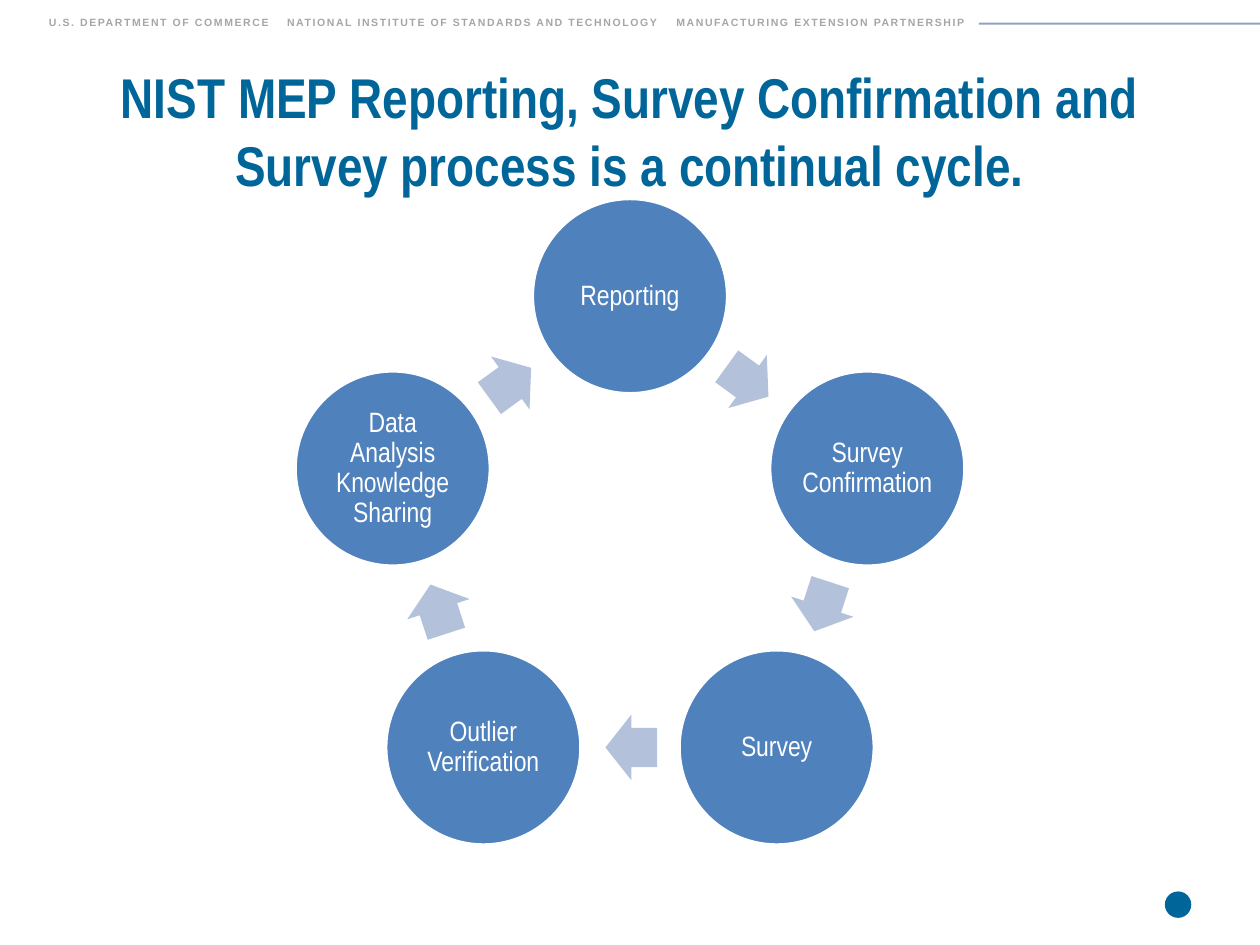
from dataclasses import dataclass
from math import cos, pi, radians, sin

from lxml.etree import SubElement
from pptx import Presentation
from pptx.dml.color import RGBColor
from pptx.enum.shapes import MSO_CONNECTOR, MSO_SHAPE
from pptx.enum.text import MSO_ANCHOR, PP_ALIGN
from pptx.oxml.ns import qn
from pptx.shapes.autoshape import Shape
from pptx.slide import Slide
from pptx.text.text import _Paragraph as Paragraph
from pptx.util import Inches, Pt


@dataclass(frozen=True)
class Theme:
    title: RGBColor = RGBColor(0x00, 0x66, 0x99)
    stage: RGBColor = RGBColor(0x4F, 0x81, 0xBD)
    arrow: RGBColor = RGBColor(0xB3, 0xC1, 0xDB)
    rule: RGBColor = RGBColor(0x1F, 0x49, 0x7D)
    banner: RGBColor = RGBColor(0xA6, 0xA6, 0xA6)
    white: RGBColor = RGBColor(0xFF, 0xFF, 0xFF)
    heading_font: str = "Arial Narrow"
    banner_font: str = "Arial"
    title_size: int = 32
    stage_size: int = 16
    banner_size: int = 6


@dataclass(frozen=True)
class Cycle:
    stages: tuple[str, ...]
    center_x: float
    center_y: float
    radius: float
    diameter: float
    arrow_length: float
    arrow_width: float
    arrow_setback: float


THEME = Theme()
WIDTH, HEIGHT = 10, 7.5
BANNER = (
    "U.S. DEPARTMENT OF COMMERCE",
    "NATIONAL INSTITUTE OF STANDARDS AND TECHNOLOGY",
    "MANUFACTURING EXTENSION PARTNERSHIP",
)
BANNER_TABS = (1.89, 4.98)
TITLE = "NIST MEP Reporting, Survey Confirmation and Survey process is a continual cycle."
CYCLE = Cycle(
    stages=(
        "Reporting",
        "Survey Confirmation",
        "Survey",
        "Outlier Verification",
        "Data Analysis Knowledge Sharing",
    ),
    center_x=WIDTH / 2,
    center_y=4.33,
    radius=1.98,
    diameter=1.55,
    arrow_length=0.41,
    arrow_width=0.52,
    arrow_setback=0.01,
)


def style(para: Paragraph, font: str, size: int, color: RGBColor, bold: bool = False) -> None:
    for span in para.runs:
        span.font.name = font
        span.font.size = Pt(size)
        span.font.bold = bold
        span.font.color.rgb = color


def add_centered(page: Slide, kind: MSO_SHAPE, x: float, y: float,
                 width: float, height: float, fill: RGBColor) -> Shape:
    shape = page.shapes.add_shape(kind, Inches(x - width / 2), Inches(y - height / 2),
                                  Inches(width), Inches(height))
    shape.shadow.inherit = False
    shape.fill.solid()
    shape.fill.fore_color.rgb = fill
    shape.line.fill.background()
    return shape


def add_banner(page: Slide) -> None:
    y = HEIGHT * 0.025
    rule = page.shapes.add_connector(MSO_CONNECTOR.STRAIGHT, Inches(7.77), Inches(y),
                                     Inches(WIDTH), Inches(y))
    rule.line.width = Pt(1.25)
    rule.line.color.rgb = THEME.rule
    color = next(rule.line._ln.iter(qn("a:srgbClr")))
    SubElement(color, qn("a:alpha"), val="50000")
    SubElement(rule._element.spPr, qn("a:effectLst"))

    box = page.shapes.add_textbox(Inches(0.29), Inches(0.08), Inches(7.9), Inches(0.2))
    box.text_frame.word_wrap = True
    para = box.text_frame.paragraphs[0]
    para.text = "\t".join(BANNER)
    tabs = SubElement(para._p.get_or_add_pPr(), qn("a:tabLst"))
    for stop in BANNER_TABS:
        SubElement(tabs, qn("a:tab"), pos=str(Inches(stop)), algn="l")
    style(para, THEME.banner_font, THEME.banner_size, THEME.banner, bold=True)
    for span in para.runs:
        span.font._element.set("spc", "90")


def add_title(page: Slide) -> None:
    box = page.shapes.add_textbox(Inches(WIDTH * 0.05), Inches(HEIGHT * 0.06),
                                  Inches(WIDTH * 0.9), Inches(HEIGHT * 0.15))
    box.text_frame.word_wrap = True
    para = box.text_frame.paragraphs[0]
    para.text = TITLE
    para.alignment = PP_ALIGN.CENTER
    style(para, THEME.heading_font, THEME.title_size, THEME.title, bold=True)


def add_stage(page: Slide, cycle: Cycle, label: str, angle: float) -> None:
    x = cycle.center_x + cycle.radius * sin(radians(angle))
    y = cycle.center_y - cycle.radius * cos(radians(angle))
    circle = add_centered(page, MSO_SHAPE.OVAL, x, y, cycle.diameter, cycle.diameter, THEME.stage)
    circle.line.color.rgb = THEME.white
    circle.line.width = Pt(2)
    frame = circle.text_frame
    frame.word_wrap = True
    frame.vertical_anchor = MSO_ANCHOR.MIDDLE
    frame.margin_left = frame.margin_right = Inches(0.02)
    frame.margin_top = frame.margin_bottom = Inches(0.02)
    para = frame.paragraphs[0]
    para.text = label
    para.alignment = PP_ALIGN.CENTER
    para.line_spacing = 0.9
    style(para, THEME.heading_font, THEME.stage_size, THEME.white)


def add_arrow(page: Slide, cycle: Cycle, angle: float) -> None:
    turn = radians(angle)
    distance = cycle.radius * cos(pi / len(cycle.stages))
    x = cycle.center_x + distance * sin(turn) - cycle.arrow_setback * cos(turn)
    y = cycle.center_y - distance * cos(turn) - cycle.arrow_setback * sin(turn)
    arrow = add_centered(page, MSO_SHAPE.RIGHT_ARROW, x, y,
                         cycle.arrow_length, cycle.arrow_width, THEME.arrow)
    arrow.adjustments[0] = 0.6
    arrow.adjustments[1] = 0.5
    arrow.rotation = angle


def add_cycle(page: Slide, cycle: Cycle) -> None:
    step = 360 / len(cycle.stages)
    for index, label in enumerate(cycle.stages):
        add_stage(page, cycle, label, index * step)
        add_arrow(page, cycle, (index + 0.5) * step)


def main() -> None:
    deck = Presentation()
    deck.slide_width = Inches(WIDTH)
    deck.slide_height = Inches(HEIGHT)
    page = deck.slides.add_slide(deck.slide_layouts[6])
    add_banner(page)
    add_centered(page, MSO_SHAPE.OVAL, 9.35, 7.18, 0.21, 0.21, THEME.title)
    add_title(page)
    add_cycle(page, CYCLE)
    deck.save("out.pptx")


if __name__ == "__main__":
    main()
